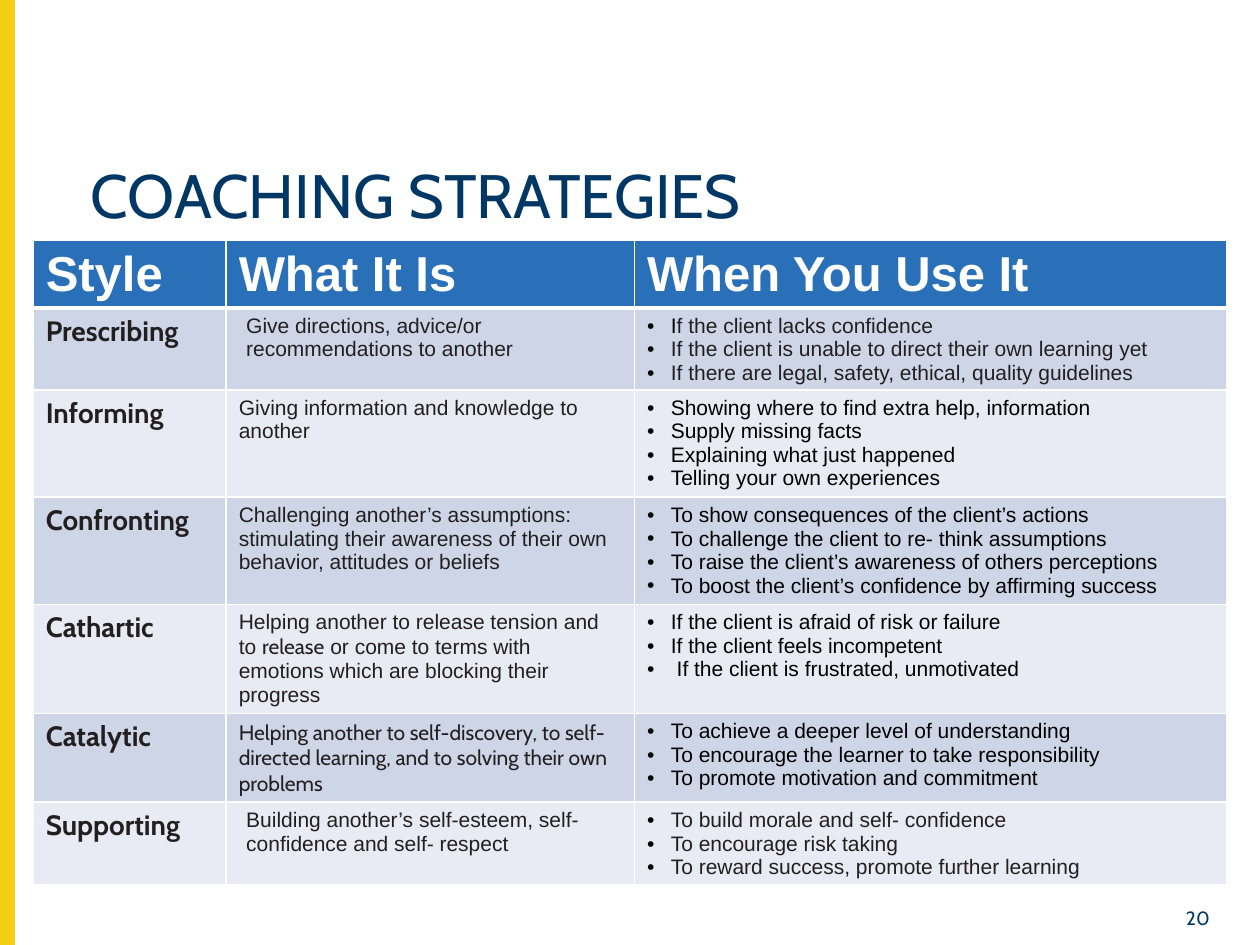
from dataclasses import dataclass

from lxml import etree
from pptx import Presentation
from pptx.dml.color import RGBColor
from pptx.enum.shapes import MSO_SHAPE
from pptx.enum.text import PP_ALIGN
from pptx.oxml.ns import qn
from pptx.slide import Slide
from pptx.table import Table, _Cell
from pptx.text.text import _Paragraph
from pptx.util import Cm, Pt

RECTANGLE = MSO_SHAPE.RECTANGLE
LEFT, RIGHT = PP_ALIGN.LEFT, PP_ALIGN.RIGHT

YELLOW = RGBColor(0xF4, 0xCE, 0x12)
NAVY = RGBColor(0x00, 0x37, 0x64)
BLUE = RGBColor(0x2A, 0x70, 0xB8)
WHITE = RGBColor(0xFF, 0xFF, 0xFF)
BLACK = RGBColor(0x00, 0x00, 0x00)
CHARCOAL = RGBColor(0x23, 0x1F, 0x20)
BANDS = (RGBColor(0xCD, 0xD5, 0xE6), RGBColor(0xE8, 0xEB, 0xF3))

BODY_FONT, DISPLAY_FONT = "Arial", "Cabin"
HEADERS = ("Style", "What It Is", "When You Use It")
COLUMN_WIDTHS = (3.89, 8.23, 11.94)
HEADER_HEIGHT = 1.36
BULLET_INDENT = Cm(0.48)


@dataclass(frozen=True)
class Span:
    text: str
    font: str = BODY_FONT
    color: RGBColor = CHARCOAL


@dataclass(frozen=True)
class Strategy:
    name: str
    description: tuple[Span, ...]
    uses: tuple[tuple[Span, ...], ...]
    height: float
    indent: float = 0


def uses(*lines: str, color: RGBColor = BLACK) -> tuple[tuple[Span, ...], ...]:
    return tuple((Span(line, color=color),) for line in lines)


STRATEGIES = (
    Strategy(
        "Prescribing",
        (Span("Give directions, advice/or recommendations to another"),),
        (
            (Span("I", color=BLACK), Span("f the client lacks confidence")),
            *uses(
                "If the client is unable to direct their own learning yet",
                "If there are legal, safety, ethical, quality guidelines",
                color=CHARCOAL,
            ),
        ),
        1.65,
        0.15,
    ),
    Strategy(
        "Informing",
        (Span("Giving information and knowledge to another"),),
        uses(
            "Showing where to find extra help, information",
            "Supply missing facts",
            "Explaining what just happened",
            "Telling your own experiences",
        ),
        2.15,
    ),
    Strategy(
        "Confronting",
        (Span("Challenging another’s assumptions: stimulating their awareness "
              "of their own behavior, attitudes or beliefs"),),
        uses(
            "To show consequences of the client’s actions",
            "To challenge the client to re- think assumptions",
            "To raise the client’s awareness of others perceptions",
            "To boost the client’s confidence by affirming success",
        ),
        2.15,
    ),
    Strategy(
        "Cathartic",
        (
            Span("Helping another to release tension and to "),
            Span("release", DISPLAY_FONT),
            Span(" or come to terms with emotions which are blocking their progress"),
        ),
        uses(
            "If the client is afraid of risk or failure",
            "If the client feels incompetent",
            " If the client is frustrated, unmotivated",
        ),
        2.2,
    ),
    Strategy(
        "Catalytic",
        (Span("Helping another to self-discovery, to self-directed learning, "
              "and to solving their own problems", DISPLAY_FONT),),
        uses(
            "To achieve a deeper level of understanding",
            "To encourage the learner to take responsibility",
            "To promote motivation and commitment",
        ),
        1.79,
    ),
    Strategy(
        "Supporting",
        (Span("Building another’s self-esteem, self- confidence and self- respect"),),
        uses(
            "To build morale and self- confidence",
            "To encourage risk taking",
            "To reward success, promote further learning",
            color=CHARCOAL,
        ),
        1.67,
        0.15,
    ),
)


def write_spans(paragraph: _Paragraph, spans: tuple[Span, ...], size: float,
                bold: bool = False) -> None:
    paragraph.font.size = Pt(size)
    paragraph.font.bold = bold
    fonts = {span.font for span in spans}
    colors = {span.color for span in spans}
    if len(fonts) == 1:
        paragraph.font.name = spans[0].font
    if len(colors) == 1:
        paragraph.font.color.rgb = spans[0].color
    for span in spans:
        run = paragraph.add_run()
        run.text = span.text
        if len(fonts) > 1:
            run.font.name = span.font
        if len(colors) > 1:
            run.font.color.rgb = span.color


def set_indent(paragraph: _Paragraph, margin: int, first_line: int = 0) -> None:
    properties = paragraph._p.get_or_add_pPr()
    properties.set("marL", str(margin))
    properties.set("indent", str(first_line))


def add_bullet(paragraph: _Paragraph) -> None:
    set_indent(paragraph, BULLET_INDENT, -BULLET_INDENT)
    properties = paragraph._p.get_or_add_pPr()
    color = etree.SubElement(properties, qn("a:buClr"))
    etree.SubElement(color, qn("a:srgbClr"), val=str(BLACK))
    etree.SubElement(properties, qn("a:buFont"), typeface=BODY_FONT)
    etree.SubElement(properties, qn("a:buChar"), char="•")


def style_cell(cell: _Cell, fill: RGBColor, top: float = 1, bottom: float = 1) -> None:
    cell.margin_bottom = 0
    properties = cell._tc.get_or_add_tcPr()
    for side, width in (("L", 1), ("R", 1), ("T", top), ("B", bottom)):
        line = etree.SubElement(properties, qn(f"a:ln{side}"), w=str(Pt(width)))
        solid = etree.SubElement(line, qn("a:solidFill"))
        etree.SubElement(solid, qn("a:srgbClr"), val=str(WHITE))
    cell.fill.solid()
    cell.fill.fore_color.rgb = fill


def fill_strategy(table: Table, index: int, strategy: Strategy) -> None:
    row = table.rows[index]
    row.height = Cm(strategy.height)
    for cell in row.cells:
        style_cell(cell, BANDS[(index - 1) % 2], top=3 if index == 1 else 1)
    name, description, usage = (cell.text_frame for cell in row.cells)
    write_spans(name.paragraphs[0], (Span(strategy.name, DISPLAY_FONT),), 16, True)
    set_indent(description.paragraphs[0], Cm(strategy.indent))
    write_spans(description.paragraphs[0], strategy.description, 12)
    for number, spans in enumerate(strategy.uses):
        paragraph = usage.add_paragraph() if number else usage.paragraphs[0]
        add_bullet(paragraph)
        write_spans(paragraph, spans, 12)


def add_strategy_table(slide: Slide) -> None:
    height = HEADER_HEIGHT + sum(strategy.height for strategy in STRATEGIES)
    table = slide.shapes.add_table(
        len(STRATEGIES) + 1, len(HEADERS), Cm(0.67), Cm(4.85),
        Cm(sum(COLUMN_WIDTHS)), Cm(height)).table
    table.horz_banding = False
    table.rows[0].height = Cm(HEADER_HEIGHT)
    for column, width in zip(table.columns, COLUMN_WIDTHS):
        column.width = Cm(width)
    for cell, header in zip(table.rows[0].cells, HEADERS):
        style_cell(cell, BLUE, bottom=3)
        write_spans(cell.text_frame.paragraphs[0], (Span(header, color=WHITE),), 28, True)
    for index, strategy in enumerate(STRATEGIES, 1):
        fill_strategy(table, index, strategy)


def add_label(slide: Slide, text: str, left: float, top: float, width: float,
              height: float, size: float, alignment: PP_ALIGN = LEFT,
              line_spacing: float = 1.0) -> None:
    frame = slide.shapes.add_textbox(Cm(left), Cm(top), Cm(width), Cm(height)).text_frame
    frame.word_wrap = True
    paragraph = frame.paragraphs[0]
    paragraph.alignment = alignment
    paragraph.line_spacing = line_spacing
    write_spans(paragraph, (Span(text, DISPLAY_FONT, NAVY),), size)


def main() -> None:
    presentation = Presentation()
    presentation.slide_width, presentation.slide_height = Cm(25.4), Cm(19.05)
    slide = presentation.slides.add_slide(presentation.slide_layouts[6])
    stripe = slide.shapes.add_shape(RECTANGLE, 0, 0, Cm(0.28), Cm(19.05))
    stripe.shadow.inherit = False
    stripe.fill.solid()
    stripe.fill.fore_color.rgb = YELLOW
    stripe.line.color.rgb = YELLOW
    stripe.line.width = Pt(1)
    add_label(slide, "COACHING STRATEGIES", 1.58, 3.21, 23.06, 2.18, 35, line_spacing=0.9)
    add_label(slide, "20", 23.37, 18.14, 1.27, 0.53, 11, RIGHT)
    add_strategy_table(slide)
    presentation.save("out.pptx")


if __name__ == "__main__":
    main()
